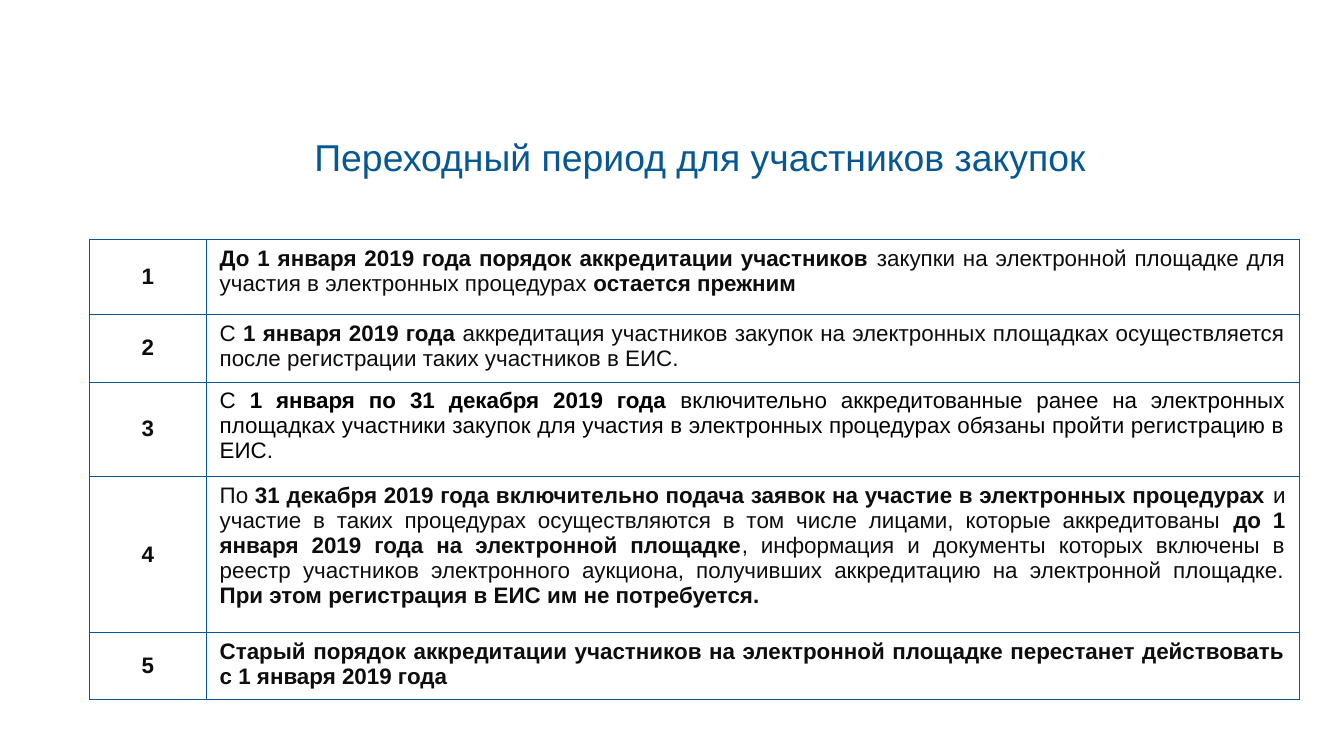
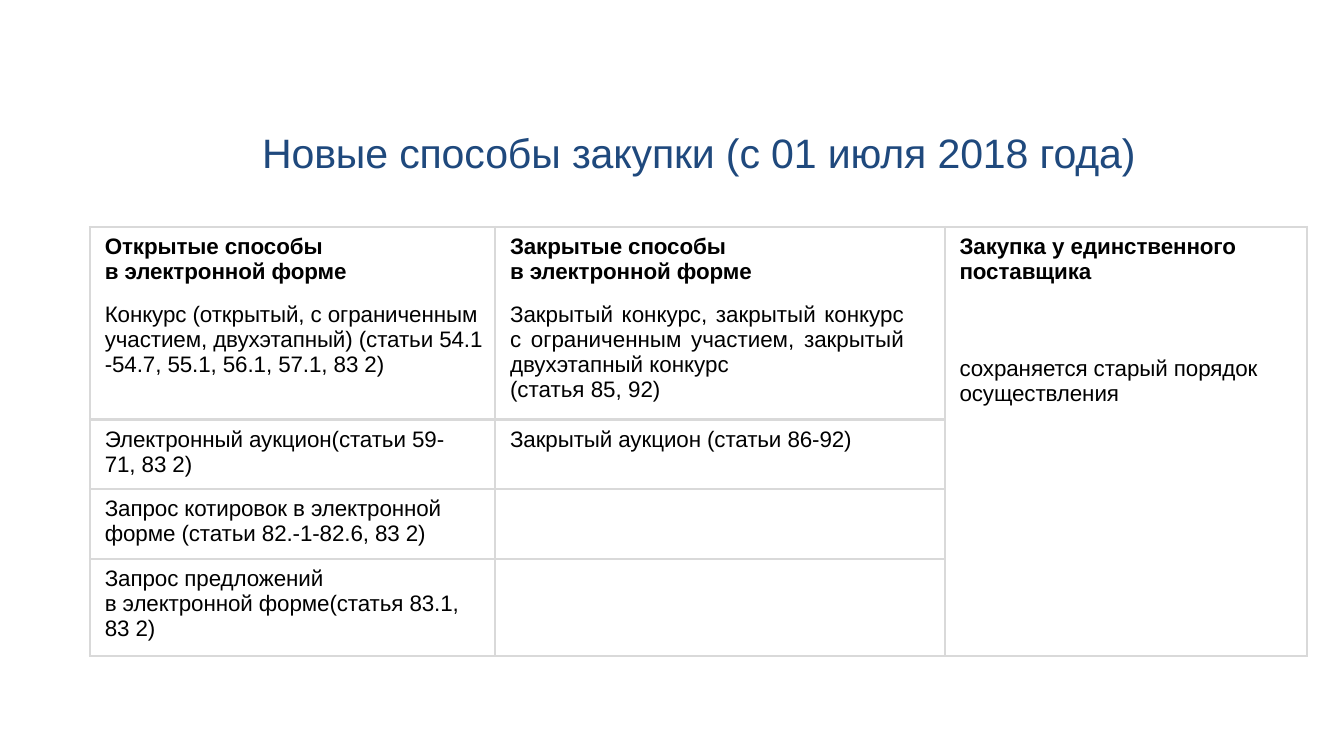
from dataclasses import dataclass

from lxml import etree
from pptx import Presentation
from pptx import util as u
from pptx.dml.color import RGBColor
from pptx.enum import text
from pptx.oxml import ns

PX = 4572  # 200 px to the inch
FONT = "Arial"
BLUE = RGBColor(0x07, 0x57, 0x94)
NAVY = RGBColor(0x1F, 0x49, 0x7D)
GREY = RGBColor(0xD9, 0xD9, 0xD9)
INK = RGBColor(0x0D, 0x0D, 0x0D)
BLACK = RGBColor(0, 0, 0)
LEFT, CENTER, JUSTIFY = text.PP_ALIGN.LEFT, text.PP_ALIGN.CENTER, text.PP_ALIGN.JUSTIFY
TOP, MIDDLE = text.MSO_ANCHOR.TOP, text.MSO_ANCHOR.MIDDLE


@dataclass(frozen=True)
class Style:
    """Text format; insets are left, top, right, bottom, spacing is in 1/100 pt."""
    color: RGBColor
    size: int = 12
    align: text.PP_ALIGN = LEFT
    anchor: text.MSO_ANCHOR = TOP
    insets: tuple[int, int, int, int] = (20, 10, 20, 10)
    spacing: int = 0


@dataclass(frozen=True)
class Title:
    words: str
    box: tuple[int, int, int, int]
    style: Style


@dataclass(frozen=True)
class Cell:
    row: int
    col: int
    words: str
    style: Style


@dataclass(frozen=True)
class Grid:
    left: int
    top: int
    cols: tuple[int, ...]
    rows: tuple[int, ...]
    line: RGBColor
    weight: float


PERIOD_TITLE = Title("Переходный период для участников закупок", (134, 160, 1816, 146),
                     Style(BLUE, 20, CENTER, MIDDLE))
PERIOD_GRID = Grid(133, 356, (174, 1626), (112, 100, 141, 232, 100), BLUE, 0.25)
NUMBER = Style(INK, align=CENTER, anchor=MIDDLE)
RULE = Style(INK, align=JUSTIFY)
RULE_BLACK = Style(BLACK, align=JUSTIFY)
PERIOD_RULES = (
    ("**До 1 января 2019 года порядок аккредитации участников **закупки на электронной "
     "площадке для участия в электронных процедурах **остается прежним**", RULE),
    ("С **1 января 2019 года **аккредитация участников закупок на электронных площадках "
     "осуществляется после регистрации таких участников в ЕИС.", RULE),
    ("С **1 января по 31 декабря 2019 года** включительно аккредитованные ранее на "
     "электронных площадках участники закупок для участия в электронных процедурах "
     "обязаны пройти регистрацию в ЕИС.", RULE_BLACK),
    ("По **31 декабря 2019 года включительно подача заявок на участие в электронных "
     "процедурах **и участие в таких процедурах осуществляются в том числе лицами, которые "
     "аккредитованы **до 1 января 2019 года на электронной площадке**, информация и "
     "документы которых включены в реестр участников электронного аукциона, получивших "
     "аккредитацию на электронной площадке. **При этом регистрация в ЕИС им не "
     "потребуется.**", RULE),
    ("**Старый порядок аккредитации участников на электронной площадке перестанет "
     "действовать с 1 января 2019 года**", RULE),
)

METHODS_TITLE = Title("Новые способы закупки (с 01 июля 2018 года)", (118, 187, 1842, 76),
                      Style(NAVY, 22, CENTER, MIDDLE, (2, 2, 0, 0), -5))
METHODS_GRID = Grid(134, 338, (603, 669, 539), (100, 186, 104, 104, 144), GREY, 1.5)
METHOD = Style(BLACK, insets=(22, 11, 0, 0), spacing=-5)
METHOD_NARROW = Style(BLACK, insets=(22, 11, 40, 0), spacing=-5)
CLOSED = Style(BLACK, align=JUSTIFY, insets=(22, 11, 60, 0))
SINGLE = Style(BLACK, insets=(22, 92, 0, 0), spacing=-5)
METHOD_CELLS = (
    Cell(0, 0, "**Открытые способы**\n**в электронной форме**", METHOD),
    Cell(0, 1, "**Закрытые способы**\n**в электронной форме**", METHOD),
    Cell(0, 2, "**Закупка у единственного поставщика**", METHOD),
    Cell(1, 0, "Конкурс (открытый, с ограниченным участием, двухэтапный) "
               "(статьи 54.1 -54.7, 55.1, 56.1, 57.1, 83 2)", METHOD),
    Cell(1, 1, "Закрытый конкурс, закрытый конкурс с ограниченным участием, закрытый "
               "двухэтапный конкурс\n(статья 85, 92)", CLOSED),
    Cell(1, 2, "сохраняется старый порядок\nосуществления", SINGLE),
    Cell(2, 0, "Электронный аукцион(статьи 59-\n71, 83 2)", METHOD),
    Cell(2, 1, "Закрытый аукцион (статьи 86-92)", METHOD),
    Cell(3, 0, "Запрос котировок в электронной\nформе (статьи 82.-1-82.6, 83 2)", METHOD),
    Cell(4, 0, "Запрос предложений\nв электронной форме(статья 83.1, 83 2)", METHOD_NARROW),
)


def px(n: int) -> u.Emu:
    return u.Emu(n * PX)


def write(tf, words: str, style: Style) -> None:
    """Fill a text frame: newlines split paragraphs, ** toggles bold."""
    for i, para in enumerate(words.split("\n")):
        p = tf.add_paragraph() if i else tf.paragraphs[0]
        p.alignment = style.align
        for j, part in enumerate(para.split("**")):
            if not part:
                continue
            r = p.add_run()
            r.text = part
            font = {"name": FONT, "size": u.Pt(style.size), "bold": j % 2 == 1}
            for key, value in font.items():
                setattr(r.font, key, value)
            r.font.color.rgb = style.color
            if style.spacing:
                r.font._element.set("spc", str(style.spacing))


def set_frame(target, style: Style) -> None:
    """Apply insets and anchor to a text frame or a table cell."""
    for side, inset in zip(("left", "top", "right", "bottom"), style.insets):
        setattr(target, f"margin_{side}", px(inset))
    target.vertical_anchor = style.anchor


def add_title(s, title: Title) -> None:
    tf = s.shapes.add_textbox(*map(px, title.box)).text_frame
    tf.word_wrap = True
    set_frame(tf, title.style)
    write(tf, title.words, title.style)


def set_borders(cell, grid: Grid, hidden: str) -> None:
    """Line all four sides of a cell except the hidden ones."""
    pr = cell._tc.get_or_add_tcPr()
    for i, side in enumerate("LRTB"):
        ln = etree.Element(ns.qn(f"a:ln{side}"), w=str(u.Pt(grid.weight)))
        if side in hidden:
            etree.SubElement(ln, ns.qn("a:noFill"))
        else:
            fill = etree.SubElement(ln, ns.qn("a:solidFill"))
            etree.SubElement(fill, ns.qn("a:srgbClr"), val=str(grid.line))
        pr.insert(i, ln)


def add_grid(s, grid: Grid, cells, open_header: bool = False):
    """Draw a table; an open header has no line between its first two rows."""
    table = s.shapes.add_table(len(grid.rows), len(grid.cols), px(grid.left), px(grid.top),
                               px(sum(grid.cols)), px(sum(grid.rows))).table
    table.first_row = table.horz_banding = False
    for col, width in zip(table.columns, grid.cols):
        col.width = px(width)
    for i, (row, height) in enumerate(zip(table.rows, grid.rows)):
        row.height = px(height)
        for cell in row.cells:
            cell.fill.background()
            set_borders(cell, grid, {0: "B", 1: "T"}.get(i, "") if open_header else "")
    for item in cells:
        cell = table.cell(item.row, item.col)
        set_frame(cell, item.style)
        write(cell.text_frame, item.words, item.style)
    return table


def add_period_slide(s) -> None:
    cells = [Cell(i, col, words, style)
             for i, (rule, rule_style) in enumerate(PERIOD_RULES)
             for col, words, style in ((0, f"**{i + 1}**", NUMBER), (1, rule, rule_style))]
    add_title(s, PERIOD_TITLE)
    add_grid(s, PERIOD_GRID, cells)


def add_methods_slide(s) -> None:
    add_title(s, METHODS_TITLE)
    table = add_grid(s, METHODS_GRID, METHOD_CELLS, open_header=True)
    table.cell(1, 2).merge(table.cell(4, 2))


def main() -> None:
    prs = Presentation()
    prs.slide_width, prs.slide_height = px(2000), px(1125)
    for build in (add_period_slide, add_methods_slide):
        build(prs.slides.add_slide(prs.slide_layouts[6]))
    prs.save("out.pptx")


if __name__ == "__main__":
    main()
